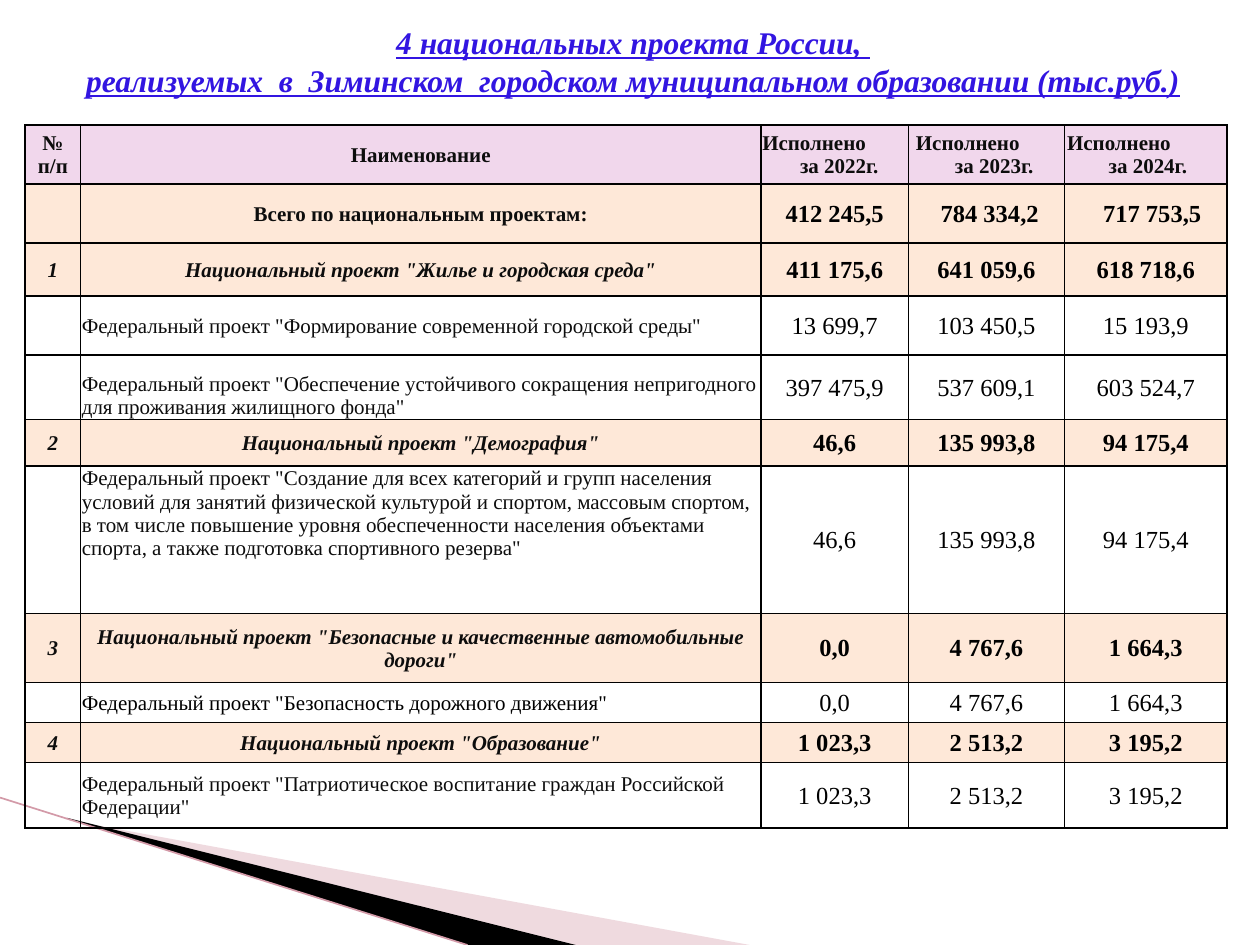
from lxml.etree import SubElement
from pptx import Presentation
from pptx.dml.color import RGBColor
from pptx.enum.shapes import MSO_CONNECTOR, MSO_SHAPE
from pptx.enum.text import MSO_ANCHOR, PP_ALIGN
from pptx.oxml.ns import qn
from pptx.util import Inches, Pt

FONT = "Times New Roman"
HEADER_FILL, PROJECT_FILL = "F1D7EC", "FEE8D8"
BLACK, INK, TITLE_COLOR = "000000", "0D0D0D", "3215E1"

TITLE = ["4 национальных проекта России, ",
         "реализуемых  в  Зиминском  городском муниципальном образовании (тыс.руб.)"]
COLUMNS = [0.44, 5.4, 1.17, 1.24, 1.29]
HEADER_HEIGHT = 0.47
# year, indent of the first line, indent of the second line
YEARS = [("2022", 0, 0.3), ("2023", 0.05, 0.36), ("2024", 0.01, 0.34)]
TOTAL_INDENTS = [0, 0.05, 0.1]
# height, kind, number, name, values by year
ROWS = [
    (0.47, "total", "", "Всего по национальным проектам:",
     ["412 245,5", "784 334,2", "717 753,5"]),
    (0.42, "national", "1", 'Национальный проект "Жилье и городская среда"',
     ["411 175,6", "641 059,6", "618 718,6"]),
    (0.47, "federal", "", 'Федеральный проект "Формирование современной городской среды"',
     ["13 699,7", "103 450,5", "15 193,9"]),
    (0.51, "federal", "", 'Федеральный проект "Обеспечение устойчивого сокращения '
     'непригодного для проживания жилищного фонда"',
     ["397 475,9", "537 609,1", "603 524,7"]),
    (0.37, "national", "2", 'Национальный проект "Демография"',
     ["46,6", "135 993,8", "94 175,4"]),
    (1.17, "federal", "", 'Федеральный проект "Создание для всех категорий и групп населения '
     'условий для занятий физической культурой и спортом, массовым спортом, в том числе '
     'повышение уровня обеспеченности населения объектами спорта, а также подготовка '
     'спортивного резерва"',
     ["46,6", "135 993,8", "94 175,4"]),
    (0.55, "national", "3", 'Национальный проект "Безопасные и качественные автомобильные дороги"',
     ["0,0", "4 767,6", "1 664,3"]),
    (0.3, "federal", "", 'Федеральный проект "Безопасность дорожного движения"',
     ["0,0", "4 767,6", "1 664,3"]),
    (0.32, "national", "4", 'Национальный проект "Образование"',
     ["1 023,3", "2 513,2", "3 195,2"]),
    (0.52, "federal", "", 'Федеральный проект "Патриотическое воспитание граждан '
     'Российской Федерации"',
     ["1 023,3", "2 513,2", "3 195,2"]),
]
NAME_ANCHORS = {4: MSO_ANCHOR.BOTTOM, 6: MSO_ANCHOR.TOP}
NAME_COLORS = {8: BLACK}


def rgb(color):
    return RGBColor.from_string(color)


def write(tf, lines, color, align=PP_ALIGN.CENTER, indents=(0,), **font):
    """Fill a text frame, one paragraph a line, with a left indent for each line."""
    for i, text in enumerate(lines):
        p = tf.paragraphs[0] if i == 0 else tf.add_paragraph()
        p.alignment = align
        if indents[i % len(indents)]:
            p._p.get_or_add_pPr().set("marL", str(Inches(indents[i % len(indents)])))
        r = p.add_run()
        r.text = text
        for name, value in {"name": FONT, **font}.items():
            setattr(r.font, name, value)
        r.font.color.rgb = rgb(color)


def add_wedge(slide, points, color, alpha=None):
    builder = slide.shapes.build_freeform(*points[0], scale=1.0)
    builder.add_line_segments(points[1:])
    sp = builder.convert_to_shape()
    sp.shadow.inherit = False
    sp.line.fill.background()
    sp.fill.solid()
    sp.fill.fore_color.rgb = rgb(color)
    if alpha:
        clr = sp.fill._xPr.find(".//" + qn("a:srgbClr"))
        SubElement(clr, qn("a:alpha")).set("val", str(alpha * 1000))


def add_corner(slide, left, top, width, height):
    """Draw the two wedges and the slanted line at the foot of the slide."""
    def at(x, y):
        return left + Inches(x), top + Inches(y)

    bottom = height / Inches(1)
    right = width / Inches(1)
    add_wedge(slide, [at(0.55, 0.18), at(right, bottom), at(4.56, bottom), at(0.55, 0.17)],
              "D8A3AF", 40)
    add_wedge(slide, [at(0.53, 0.16), at(4.57, bottom), at(3.72, bottom), at(0.54, 0.17)], BLACK)
    line = slide.shapes.add_connector(MSO_CONNECTOR.STRAIGHT, *at(0, 0), *at(3.71, bottom))
    line.line.color.rgb = rgb("D39AA8")
    line.line.width = Pt(0.95)
    SubElement(line._element.spPr, qn("a:effectLst"))


def add_title(slide, left, top, width, height):
    sp = slide.shapes.add_shape(MSO_SHAPE.ROUNDED_RECTANGLE, left, top, width, height)
    sp.shadow.inherit = False
    sp.fill.background()
    sp.line.fill.background()
    tf = sp.text_frame
    tf.word_wrap = True
    tf.vertical_anchor = MSO_ANCHOR.MIDDLE
    write(tf, TITLE, TITLE_COLOR, size=Pt(18), bold=True, italic=True, underline=True)


def format_cell(cell, fill=None, anchor=MSO_ANCHOR.MIDDLE):
    tcPr = cell._tc.get_or_add_tcPr()
    for side in ("lnL", "lnR", "lnT", "lnB"):
        ln = SubElement(tcPr, qn("a:" + side), w=str(Pt(1)))
        SubElement(SubElement(ln, qn("a:solidFill")), qn("a:srgbClr"), val=BLACK)
    if fill:
        cell.fill.solid()
        cell.fill.fore_color.rgb = rgb(fill)
    else:
        cell.fill.background()
    for side in ("left", "right", "top"):
        setattr(cell, "margin_" + side, Inches(0.01))
    cell.margin_bottom = 0
    cell.vertical_anchor = anchor


def fill_header(cells):
    for cell in cells:
        format_cell(cell, HEADER_FILL)
    font = {"size": Pt(12), "bold": True}
    for cell, text in zip(cells, ["№ п/п", "Наименование"]):
        write(cell.text_frame, [text], INK, **font)
    for cell, (year, *indents) in zip(cells[2:], YEARS):
        write(cell.text_frame, ["Исполнено", f"за {year}г."], INK, PP_ALIGN.LEFT, indents, **font)


def fill_row(cells, index, kind, number, name, values):
    federal = kind == "federal"
    fill = None if federal else PROJECT_FILL
    font = {"size": Pt(12), "bold": not federal, "italic": kind == "national"}
    format_cell(cells[0], fill)
    if number:
        write(cells[0].text_frame, [number], INK, **font)
    format_cell(cells[1], fill, NAME_ANCHORS.get(index, MSO_ANCHOR.MIDDLE))
    write(cells[1].text_frame, [name], NAME_COLORS.get(index, INK),
          PP_ALIGN.LEFT if federal else PP_ALIGN.CENTER, **font)
    for cell, value, indent in zip(cells[2:], values, TOTAL_INDENTS):
        format_cell(cell, fill)
        write(cell.text_frame, [value], BLACK, indents=[indent if kind == "total" else 0],
              size=Pt(14), bold=not federal)


def add_projects_table(slide, left, top, width, height):
    frame = slide.shapes.add_table(len(ROWS) + 1, len(COLUMNS), left, top, width, height)
    table = frame.table
    table.first_row = table.horz_banding = False
    for column, size in zip(table.columns, COLUMNS):
        column.width = Inches(size)
    table.rows[0].height = Inches(HEADER_HEIGHT)
    fill_header(list(table.rows[0].cells))
    for i, (size, *content) in enumerate(ROWS, 1):
        table.rows[i].height = Inches(size)
        fill_row(list(table.rows[i].cells), i, *content)


def main():
    prs = Presentation()
    prs.slide_width, prs.slide_height = Inches(10), Inches(7.5)
    slide = prs.slides.add_slide(prs.slide_layouts[6])
    add_corner(slide, 0, Inches(6.33), Inches(5.95), Inches(1.17))
    add_title(slide, Inches(0.46), Inches(0.13), Inches(9.13), Inches(0.71))
    add_projects_table(slide, Inches(0.2), Inches(0.99), Inches(9.54), Inches(5.57))
    prs.save("out.pptx")


if __name__ == "__main__":
    main()
